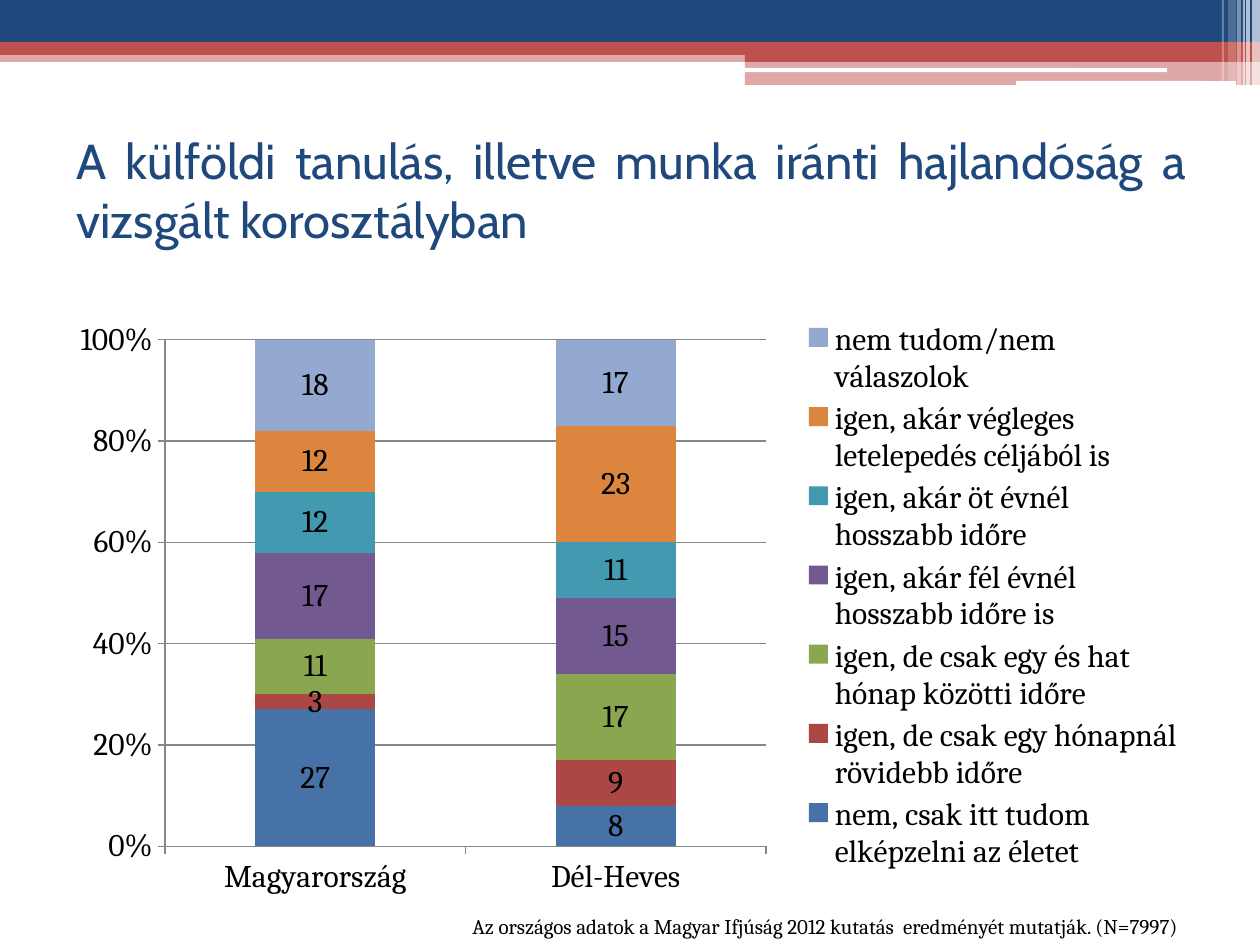
import pptx
import pptx.chart.data
import pptx.dml.color
import pptx.enum.chart
import pptx.enum.shapes
import pptx.enum.text
import pptx.oxml
import pptx.oxml.ns
import pptx.util

RGBColor = pptx.dml.color.RGBColor
NAVY = RGBColor(0x1F, 0x49, 0x7D)
RED = RGBColor(0xC0, 0x50, 0x4D)
WHITE = RGBColor(0xFF, 0xFF, 0xFF)
BLACK = RGBColor(0x00, 0x00, 0x00)
GRAY = RGBColor(0x87, 0x87, 0x87)
BLUE_BAR = RGBColor(0x46, 0x72, 0xA8)
RED_BAR = RGBColor(0xAB, 0x47, 0x44)
GREEN_BAR = RGBColor(0x8A, 0xA6, 0x4F)
PURPLE_BAR = RGBColor(0x72, 0x59, 0x90)
TEAL_BAR = RGBColor(0x42, 0x99, 0xB0)
ORANGE_BAR = RGBColor(0xDC, 0x85, 0x3E)
PALE_BAR = RGBColor(0x93, 0xA9, 0xCF)

EMU_PER_PX = 914400 / 126
RECTANGLE = pptx.enum.shapes.MSO_SHAPE.RECTANGLE
ROUNDED = pptx.enum.shapes.MSO_SHAPE.ROUNDED_RECTANGLE

BANDS = [
    (RECTANGLE, (0, 50, 1260, 12), RED, 50),
    (RECTANGLE, (0, 0, 1260, 42), NAVY, 100),
    (RECTANGLE, (0, 42, 1260, 13), RED, 100),
    (RECTANGLE, (745, 49, 515, 13), RED, 100),
    (RECTANGLE, (745, 62, 515, 23), RED, 50),
    (ROUNDED, (745, 68, 422, 4), WHITE, 100),
    (ROUNDED, (1016, 81, 220, 5), WHITE, 100),
]
STRIPES = [
    (1252, 8, 86, 65),
    (1246, 4, 86, 65),
    (1243, 2, 86, 60),
    (1237, 4, 86, 40),
    (1228, 8, 81, 20),
    (1222, 2, 81, 30),
]
CATEGORIES = ["Magyarország", "Dél-Heves"]
ANSWERS = [
    ("nem, csak itt tudom elképzelni az életet", (27, 8), BLUE_BAR),
    ("igen, de csak egy hónapnál rövidebb időre", (3, 9), RED_BAR),
    ("igen, de csak egy és hat hónap közötti időre", (11, 17), GREEN_BAR),
    ("igen, akár fél évnél hosszabb időre is", (17, 15), PURPLE_BAR),
    ("igen, akár öt évnél hosszabb időre", (12, 11), TEAL_BAR),
    ("igen, akár végleges letelepedés céljából is", (12, 23), ORANGE_BAR),
    ("nem tudom/nem válaszolok", (18, 17), PALE_BAR),
]


def px(value):
    return pptx.util.Emu(round(value * EMU_PER_PX))


def add_band(slide, preset, box, color, opacity):
    shape = slide.shapes.add_shape(preset, *map(px, box))
    shape.shadow.inherit = False
    shape.line.fill.background()
    shape.fill.solid()
    shape.fill.fore_color.rgb = color
    if opacity < 100:
        color_element = shape.element.spPr.find(".//" + pptx.oxml.ns.qn("a:srgbClr"))
        alpha = pptx.oxml.parse_xml(
            f'<a:alpha {pptx.oxml.ns.nsdecls("a")} val="{opacity * 1000}"/>'
        )
        color_element.append(alpha)


def add_text(slide, box, text, font_name, size, color, alignment):
    shape = slide.shapes.add_textbox(*map(px, box))
    frame = shape.text_frame
    frame.word_wrap = True
    frame.vertical_anchor = pptx.enum.text.MSO_ANCHOR.MIDDLE
    paragraph = frame.paragraphs[0]
    paragraph.text = text
    paragraph.alignment = alignment
    paragraph.font.name = font_name
    paragraph.font.size = pptx.util.Pt(size)
    paragraph.font.color.rgb = color


def set_layout(parent, index, fractions, target=""):
    for layout in parent.findall(pptx.oxml.ns.qn("c:layout")):
        parent.remove(layout)
    modes = '<c:xMode val="edge"/><c:yMode val="edge"/>'
    sizes = "".join(f'<c:{key} val="{value}"/>' for key, value in zip("xywh", fractions))
    parent.insert(index, pptx.oxml.parse_xml(
        f'<c:layout {pptx.oxml.ns.nsdecls("c")}><c:manualLayout>'
        f"{target}{modes}{sizes}</c:manualLayout></c:layout>"
    ))


def style_axes(chart):
    value_axis = chart.value_axis
    value_axis.minimum_scale = 0
    value_axis.maximum_scale = 1
    value_axis.major_unit = 0.2
    value_axis.has_major_gridlines = True
    value_axis.major_gridlines.format.line.color.rgb = GRAY
    value_axis.tick_labels.number_format = "0%"
    value_axis.tick_labels.number_format_is_linked = False
    for axis in (value_axis, chart.category_axis):
        axis.major_tick_mark = pptx.enum.chart.XL_TICK_MARK.OUTSIDE
        axis.format.line.color.rgb = GRAY


def add_answer_chart(slide, box):
    data = pptx.chart.data.CategoryChartData()
    data.categories = CATEGORIES
    for name, values, _ in ANSWERS:
        data.add_series(name, values)
    chart = slide.shapes.add_chart(
        pptx.enum.chart.XL_CHART_TYPE.COLUMN_STACKED_100, *map(px, box), data
    ).chart
    chart.has_title = False
    chart.font.name = "Cambria"
    chart.font.size = pptx.util.Pt(18)
    chart.font.color.rgb = BLACK
    style_axes(chart)

    plot = chart.plots[0]
    plot.vary_by_categories = False
    plot.gap_width = 150
    plot.overlap = 100
    for series, (_, _, color) in zip(plot.series, ANSWERS):
        series.format.fill.solid()
        series.format.fill.fore_color.rgb = color
        series.data_labels.show_value = True

    chart.has_legend = True
    chart.legend.position = pptx.enum.chart.XL_LEGEND_POSITION.RIGHT
    chart.legend.include_in_layout = False
    plot_area = chart.element.find(".//" + pptx.oxml.ns.qn("c:plotArea"))
    legend = chart.element.find(".//" + pptx.oxml.ns.qn("c:legend"))
    set_layout(plot_area, 0, (0.09, 0.05, 0.53, 0.85), '<c:layoutTarget val="inner"/>')
    set_layout(legend, 1, (0.65, 0.01, 0.34, 0.94))


def main():
    presentation = pptx.Presentation()
    presentation.slide_width = px(1260)
    presentation.slide_height = px(945)
    slide = presentation.slides.add_slide(presentation.slide_layouts[6])
    for band in BANDS:
        add_band(slide, *band)
    for left, width, height, opacity in STRIPES:
        add_band(slide, RECTANGLE, (left, 0, width, height), WHITE, opacity)
    add_text(
        slide, (64, 116, 1134, 147),
        "A külföldi tanulás, illetve munka iránti hajlandóság a vizsgált korosztályban",
        "Cabin", 28, NAVY, pptx.enum.text.PP_ALIGN.JUSTIFY,
    )
    add_answer_chart(slide, (63, 310, 1134, 596))
    add_text(
        slide, (460, 907, 800, 38),
        "Az országos adatok a Magyar Ifjúság 2012 kutatás  eredményét mutatják. (N=7997)",
        "Cambria", 12, BLACK, pptx.enum.text.PP_ALIGN.LEFT,
    )
    presentation.save("out.pptx")


if __name__ == "__main__":
    main()
